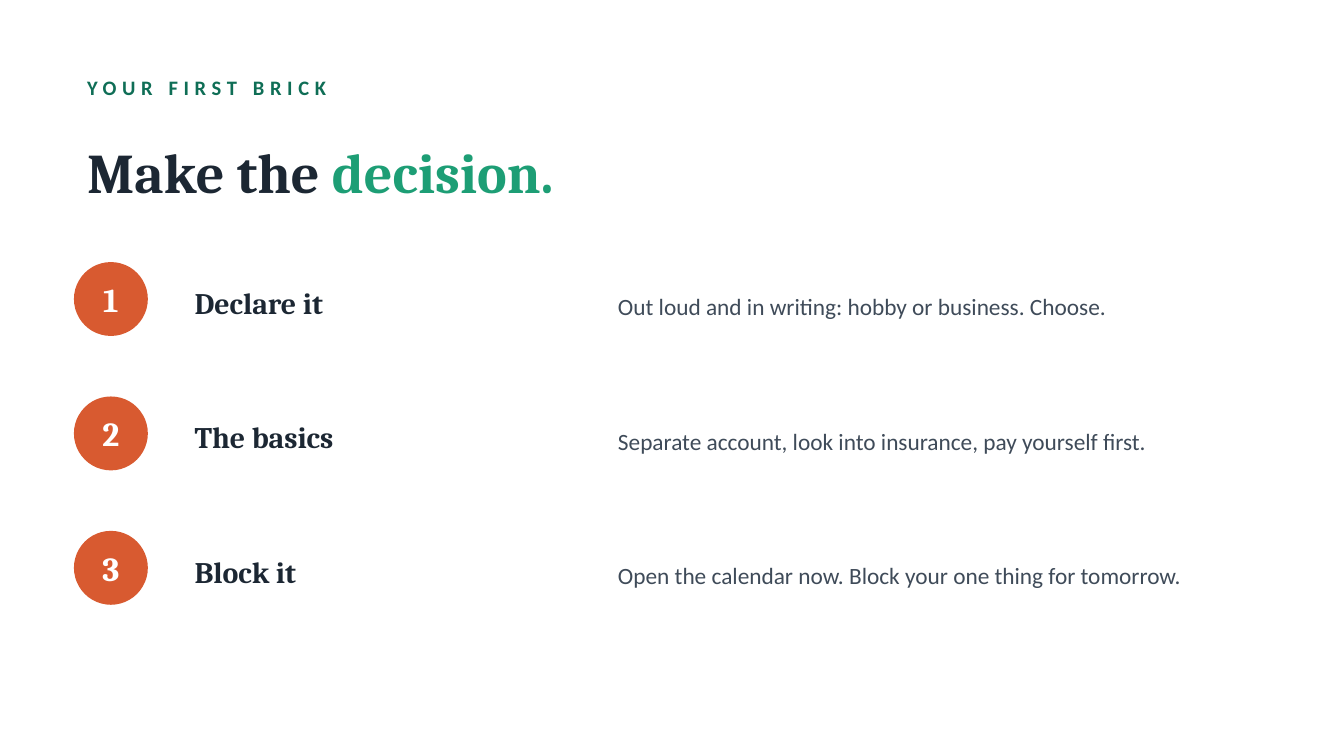
import pptx
import pptx.dml.color
import pptx.enum.shapes
import pptx.enum.text
import pptx.util
from pptx.util import Inches

COLORS = {
    "background": "FFFFFF",
    "eyebrow": "0F6E56",
    "heading": "1C2733",
    "accent": "1D9E75",
    "badge": "D85A30",
    "badge_text": "FFFFFF",
    "body": "3F4B59",
}
HEADING_FONT = "Cambria"
BODY_FONT = "Calibri"
STEPS = [
    ("Declare it", "Out loud and in writing: hobby or business. Choose."),
    ("The basics", "Separate account, look into insurance, pay yourself first."),
    ("Block it", "Open the calendar now. Block your one thing for tomorrow."),
]


def rgb(name):
    return pptx.dml.color.RGBColor.from_string(COLORS[name])


def write(shape, pieces, size, font_name, bold=True):
    """Fill the shape with one paragraph of (text, color name) pieces and return it."""
    text_frame = shape.text_frame
    text_frame.word_wrap = True
    text_frame.vertical_anchor = pptx.enum.text.MSO_ANCHOR.MIDDLE
    paragraph = text_frame.paragraphs[0]
    for text, color in pieces:
        run = paragraph.add_run()
        run.text = text
        run.font.size = pptx.util.Pt(size)
        run.font.name = font_name
        run.font.bold = bold
        run.font.color.rgb = rgb(color)
    return paragraph


def add_text(slide, box, pieces, size, font_name, bold=True):
    text_box = slide.shapes.add_textbox(*map(Inches, box))
    return write(text_box, pieces, size, font_name, bold)


def add_header(slide, left, top, width):
    eyebrow = add_text(slide, (left, top, width, 0.3),
                       [("YOUR FIRST BRICK", "eyebrow")], 11, BODY_FONT)
    # Letter spacing is in hundredths of a point
    eyebrow.runs[0].font._element.set("spc", "300")
    add_text(slide, (left, top + 0.35, width, 0.85),
             [("Make the ", "heading"), ("decision.", "accent")], 30, HEADING_FONT)


def add_badge(slide, left, top, size, label):
    badge = slide.shapes.add_shape(pptx.enum.shapes.MSO_SHAPE.OVAL,
                                   *map(Inches, (left, top, size, size)))
    badge.shadow.inherit = False
    badge.fill.solid()
    badge.fill.fore_color.rgb = rgb("badge")
    badge.line.fill.background()
    paragraph = write(badge, [(label, "badge_text")], 18, HEADING_FONT)
    paragraph.alignment = pptx.enum.text.PP_ALIGN.CENTER


def add_step(slide, left, top, number, title, description):
    add_badge(slide, left, top + 0.05, 0.55, str(number))
    add_text(slide, (left + 0.8, top, 3, 0.7), [(title, "heading")], 16, HEADING_FONT)
    paragraph = add_text(slide, (left + 3.95, top, 5, 0.75),
                         [(description, "body")], 12.5, BODY_FONT, bold=False)
    paragraph.line_spacing = 1.05


def main():
    presentation = pptx.Presentation()
    presentation.slide_width = Inches(10)
    presentation.slide_height = Inches(10 * 9 / 16)
    slide = presentation.slides.add_slide(presentation.slide_layouts[6])
    slide.background.fill.solid()
    slide.background.fill.fore_color.rgb = rgb("background")

    left = 0.55
    add_header(slide, left, 0.5, 8.9)
    for index, (title, description) in enumerate(STEPS):
        add_step(slide, left, 1.9 + index, index + 1, title, description)

    presentation.save("out.pptx")


if __name__ == "__main__":
    main()
